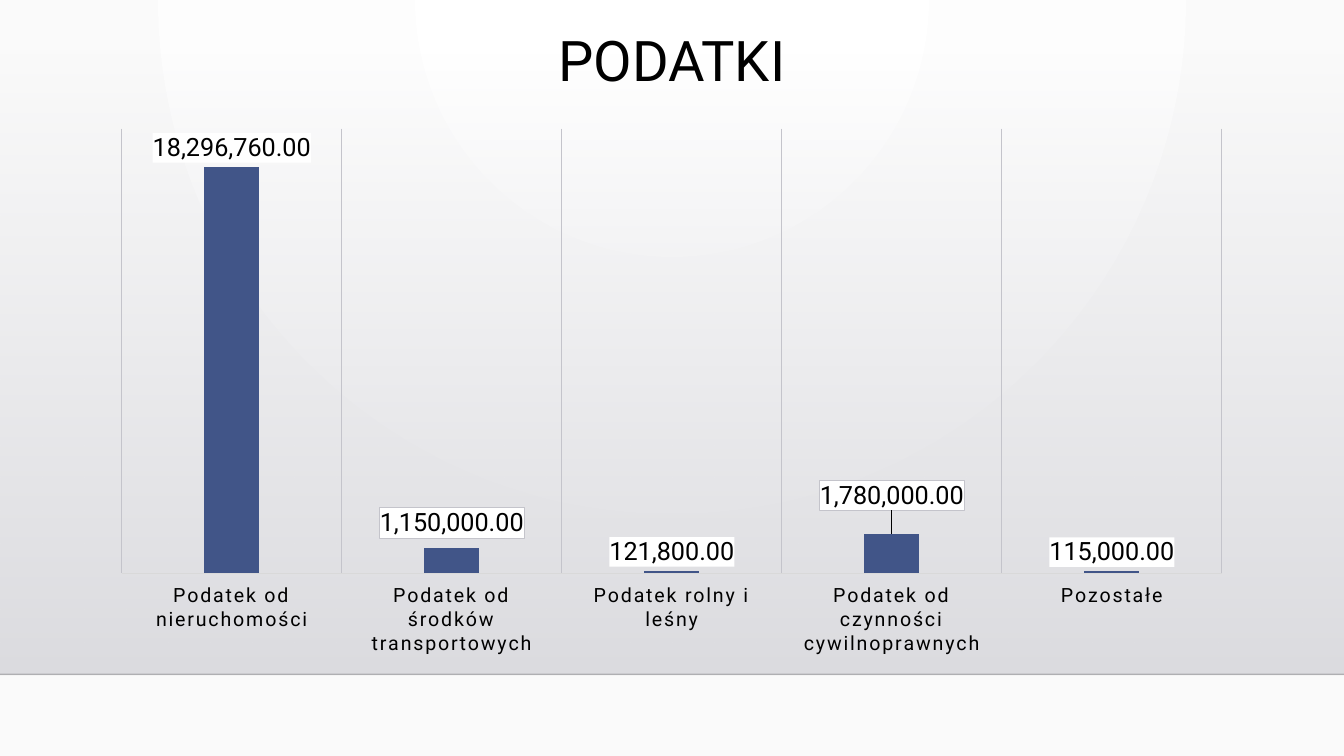
from dataclasses import dataclass

from pptx import Presentation
from pptx.chart.data import CategoryChartData
from pptx.dml.color import RGBColor as RGB
from pptx.enum.chart import XL_CHART_TYPE as ChartType
from pptx.enum.chart import XL_LABEL_POSITION as LabelPos
from pptx.enum.chart import XL_TICK_LABEL_POSITION as TickPos
from pptx.enum.chart import XL_TICK_MARK as TickMark
from pptx.enum.shapes import MSO_CONNECTOR as Connector
from pptx.enum.shapes import MSO_SHAPE as Shape
from pptx.enum.text import MSO_ANCHOR as Anchor
from pptx.enum.text import PP_ALIGN as Align
from pptx.oxml import parse_xml
from pptx.oxml.ns import nsdecls
from pptx.util import Pt


@dataclass(frozen=True)
class Theme:
    font: str = "Roboto"
    text: str = "000000"
    white: str = "FFFFFF"
    floor: str = "FAFAFA"
    wall_top: str = "DCDCE0"
    wall_bottom: str = "DEDEE2"
    edge: str = "000001"
    bar: str = "415588"
    axis: str = "D9D9D9"
    grid: str = "C4C4CB"
    title_size: int = 40
    label_size: int = 18
    category_size: int = 14


theme = Theme()


def style_font(font, size):
    font.name = theme.font
    font.size = Pt(size)
    font.bold = False
    font.color.rgb = RGB.from_string(theme.text)


def gradient(first, last, alpha, direction):
    return parse_xml(
        f'<a:gradFill {nsdecls("a")} rotWithShape="1"><a:gsLst>'
        f'<a:gs pos="0"><a:srgbClr val="{first}"><a:alpha val="{alpha}"/></a:srgbClr></a:gs>'
        f'<a:gs pos="100000"><a:srgbClr val="{last}"/></a:gs></a:gsLst>{direction}</a:gradFill>')


deck = Presentation()
deck.slide_width, deck.slide_height = Pt(960), Pt(540)
slide = deck.slides.add_slide(deck.slide_layouts[6])

# Background: a glow from the top centre
slide.background.fill.solid()
backdrop = slide.background.fill
backdrop.fore_color.rgb = RGB.from_string(theme.floor)
solid = slide.element.xpath("./p:cSld/p:bg/p:bgPr/a:solidFill")[0]
glow = ('<a:path path="circle"><a:fillToRect l="43000" t="0" r="43000" b="100000"/></a:path>')
solid.getparent().replace(solid, gradient(theme.white, theme.floor, 100000, glow))

# Wall fading in towards its lower edge
wall = slide.shapes.add_shape(Shape.RECTANGLE, 0, Pt(36.7), Pt(960), Pt(445))
wall.shadow.inherit = False
wall.line.fill.background()
wall.fill.solid()
wall.fill.fore_color.rgb = RGB.from_string(theme.wall_top)
solid = wall.element.xpath("./p:spPr/a:solidFill")[0]
solid.getparent().replace(
    solid, gradient(theme.wall_top, theme.wall_bottom, 0, '<a:lin ang="5400000" scaled="0"/>'))

edge = slide.shapes.add_connector(Connector.STRAIGHT, 0, Pt(481.7), Pt(960), Pt(481.7))
edge.line.width = Pt(1)
edge.line.color.rgb = RGB.from_string(theme.edge)
edge_color = edge.element.xpath("./p:spPr/a:ln//a:srgbClr")[0]
edge_color.append(parse_xml(f'<a:alpha {nsdecls("a")} val="20000"/>'))
edge.element.spPr.append(parse_xml(f'<a:effectLst {nsdecls("a")}/>'))

# Title
title = slide.shapes.add_textbox(0, Pt(18.7), Pt(960), Pt(65.5)).text_frame
title.word_wrap = True
title.vertical_anchor = Anchor.TOP
title.margin_top = Pt(5)
heading = title.paragraphs[0]
heading.alignment = Align.CENTER
heading.line_spacing = 0.9
heading_run = heading.add_run()
heading_run.text = "PODATKI"
style_font(heading_run.font, theme.title_size)

# Tax revenue chart
taxes = {
    "Podatek od nieruchomości": 18296760,
    "Podatek od środków transportowych": 1150000,
    "Podatek rolny i leśny": 121800,
    "Podatek od czynności cywilnoprawnych": 1780000,
    "Pozostałe": 115000,
}
revenue = CategoryChartData(number_format="#,##0.00")
revenue.categories = list(taxes)
revenue.add_series("Series 1", list(taxes.values()))
chart = slide.shapes.add_chart(
    ChartType.COLUMN_CLUSTERED, Pt(70.6), Pt(84.2), Pt(818.6), Pt(387.4), revenue).chart
chart.has_legend = False
chart.has_title = False
style_font(chart.font, theme.category_size)

bars = chart.plots[0]
bars.gap_width = 300
bars.overlap = -90
bars.vary_by_categories = False
tax_series = bars.series[0]
tax_series.format.fill.solid()
tax_series.format.fill.fore_color.rgb = RGB.from_string(theme.bar)

plot_area = chart.element.xpath("./c:chart/c:plotArea")[0]
for layout in plot_area.xpath("./c:layout"):
    plot_area.remove(layout)
plot_area.insert(0, parse_xml(
    f'<c:layout {nsdecls("c")}><c:manualLayout><c:layoutTarget val="inner"/>'
    '<c:xMode val="edge"/><c:yMode val="edge"/><c:x val="0.02"/><c:y val="0.02"/>'
    '<c:w val="0.96"/><c:h val="0.82"/></c:manualLayout></c:layout>'))

# Axes
amounts = chart.value_axis
amounts.visible = False
amounts.has_major_gridlines = False
amounts.minimum_scale, amounts.maximum_scale = 0, 20000000

tax_names = chart.category_axis
tax_names.major_tick_mark = tax_names.minor_tick_mark = TickMark.NONE
tax_names.tick_label_position = TickPos.LOW
tax_names.has_major_gridlines = True
for line, color in ((tax_names.format.line, theme.axis),
                    (tax_names.major_gridlines.format.line, theme.grid)):
    line.width = Pt(0.75)
    line.color.rgb = RGB.from_string(color)
style_font(tax_names.tick_labels.font, theme.category_size)
plot_area.xpath("./c:catAx/c:txPr//a:defRPr")[0].set("spc", "120")

# Amount labels: white boxes, two of them raised and outlined
raised = {1: -0.01, 3: -0.035}
amount_labels = tax_series.data_labels
amount_labels.show_value = True
amount_labels.number_format = "#,##0.00"
amount_labels.number_format_is_linked = False
for label in [amount_labels] + [tax_series.points[i].data_label for i in raised]:
    style_font(label.font, theme.label_size)
    label.position = LabelPos.OUTSIDE_END

series_xml = plot_area.xpath("./c:barChart/c:ser")[0]
for box in series_xml.xpath("./c:dLbls | ./c:dLbls/c:dLbl"):
    index = box.xpath("./c:idx")
    outline = "<a:noFill/>"
    if index:
        outline = f'<a:solidFill><a:srgbClr val="{theme.grid}"/></a:solidFill>'
        index[0].addnext(parse_xml(
            f'<c:layout {nsdecls("c")}><c:manualLayout><c:x val="0"/>'
            f'<c:y val="{raised[int(index[0].get("val"))]}"/></c:manualLayout></c:layout>'))
    for old in box.xpath("./c:spPr"):
        box.remove(old)
    text_props = box.xpath("./c:txPr")[0]
    if index:
        text_props.addprevious(parse_xml(
            f'<c:numFmt {nsdecls("c")} formatCode="#,##0.00" sourceLinked="0"/>'))
    text_props.addprevious(parse_xml(
        f'<c:spPr {nsdecls("c", "a")}><a:solidFill><a:srgbClr val="{theme.white}"/></a:solidFill>'
        f'<a:ln w="9525">{outline}</a:ln></c:spPr>'))

deck.save("out.pptx")
